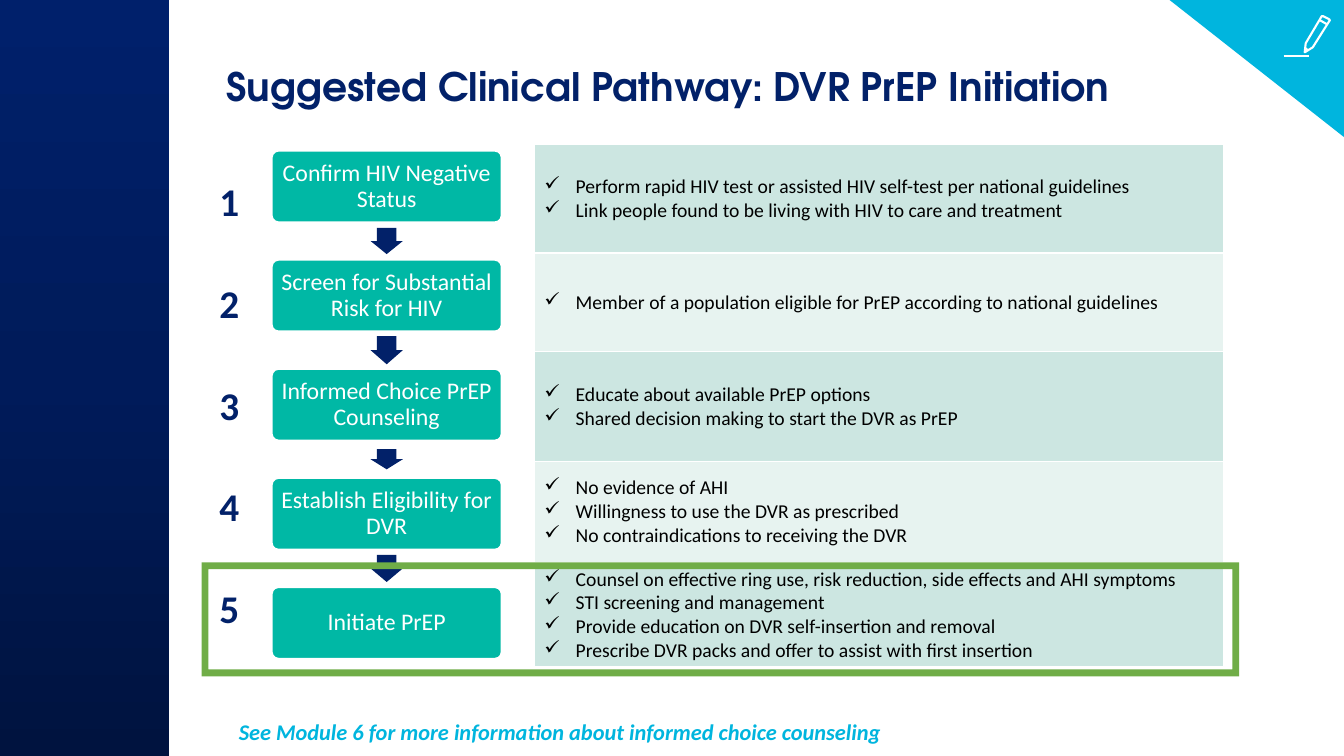
"""Build the clinical pathway slide for DVR PrEP initiation."""
from copy import deepcopy

from lxml.etree import SubElement
from pptx import Presentation
from pptx.dml.color import RGBColor
from pptx.enum.shapes import MSO_CONNECTOR, MSO_SHAPE as SHAPE
from pptx.enum.text import MSO_ANCHOR as ANCHOR, PP_ALIGN as ALIGN
from pptx.oxml import parse_xml
from pptx.oxml.ns import nsdecls, qn
from pptx.util import Inches, Pt

WHITE = RGBColor(0xFF, 0xFF, 0xFF)
BLACK = RGBColor(0, 0, 0)
NAVY = RGBColor(0x02, 0x21, 0x69)
TEAL = RGBColor(0x00, 0xB8, 0xA5)
CYAN = RGBColor(0x00, 0xB5, 0xDE)
GREEN = RGBColor(0x70, 0xAD, 0x47)
ROW_FILLS = [RGBColor(0xCC, 0xE6, 0xE1), RGBColor(0xE7, 0xF3, 0xF0)]
SIDEBAR_STOPS = [RGBColor(0x00, 0x13, 0x3F), RGBColor(0x00, 0x1B, 0x5A), RGBColor(0x00, 0x20, 0x6B)]

STEPS = [
    ("Confirm HIV Negative Status", 1.08, [
        "Perform rapid HIV test or assisted HIV self-test per national guidelines",
        "Link people found to be living with HIV to care and treatment"]),
    ("Screen for Substantial Risk for HIV", 0.98, [
        "Member of a population eligible for PrEP according to national guidelines"]),
    ("Informed Choice PrEP Counseling", 1.09, [
        "Educate about available PrEP options",
        "Shared decision making to start the DVR as PrEP"]),
    ("Establish Eligibility for DVR", 1, [
        "No evidence of AHI",
        "Willingness to use the DVR as prescribed",
        "No contraindications to receiving the DVR"]),
    ("Initiate PrEP", 1, [
        "Counsel on effective ring use, risk reduction, side effects and AHI symptoms",
        "STI screening and management",
        "Provide education on DVR self-insertion and removal",
        "Prescribe DVR packs and offer to assist with first insertion"]),
]
ARROW_LENGTHS = [0.26, 0.28, 0.2, 0.27]
BOX_LEFT, BOX_TOP, BOX_WIDTH, BOX_HEIGHT = 2.69, 1.49, 2.29, 0.72
BOX_PITCH = (5.82 - BOX_TOP) / 4

presentation = Presentation()
presentation.slide_width, presentation.slide_height = Inches(13.33), Inches(7.5)
slide = presentation.slides.add_slide(presentation.slide_layouts[6])
shapes = slide.shapes


def add_filled_shape(kind, left, top, width, height, color):
    shape = shapes.add_shape(kind, Inches(left), Inches(top), Inches(width), Inches(height))
    shape.shadow.inherit = False
    shape.fill.solid()
    shape.fill.fore_color.rgb = color
    shape.line.fill.background()
    return shape


def add_text(paragraph, text, size, color, bold=False, name="Calibri"):
    run = paragraph.add_run()
    run.text = text
    run.font.name, run.font.size, run.font.bold = name, Pt(size), bold
    run.font.color.rgb = color
    return run


sidebar = add_filled_shape(SHAPE.RECTANGLE, 0, 0, 1.68, 7.5, NAVY)
sidebar.fill.gradient()
sidebar.fill.gradient_angle = 90
stop_list = sidebar._element.spPr.find(qn("a:gradFill")).find(qn("a:gsLst"))
stop_list.insert(1, deepcopy(stop_list[0]))
for index, (stop, color) in enumerate(zip(sidebar.fill.gradient_stops, SIDEBAR_STOPS)):
    stop.position = index / 2
    stop.color.rgb = color

title = shapes.add_textbox(Inches(2.15), Inches(0.57), Inches(10), Inches(0.92))
title.text_frame.word_wrap = True
add_text(title.text_frame.paragraphs[0], "Suggested Clinical Pathway: DVR PrEP Initiation",
         28, NAVY, True, "TeX Gyre Adventor")

for index, (step, _, _) in enumerate(STEPS):
    top = BOX_TOP + index * BOX_PITCH
    box = add_filled_shape(SHAPE.ROUNDED_RECTANGLE, BOX_LEFT, top, BOX_WIDTH, BOX_HEIGHT, TEAL)
    box.adjustments[0] = 0.1
    box.line.color.rgb = WHITE
    box.line.width = Pt(2)
    frame = box.text_frame
    frame.word_wrap = True
    frame.vertical_anchor = ANCHOR.MIDDLE
    frame.margin_left = frame.margin_right = Inches(0.07)
    frame.margin_top = frame.margin_bottom = Inches(0.07)
    paragraph = frame.paragraphs[0]
    paragraph.alignment = ALIGN.CENTER
    paragraph.line_spacing = 0.9
    add_text(paragraph, step, 17, WHITE)
    if index < len(ARROW_LENGTHS):
        length = ARROW_LENGTHS[index]
        middle = top + (BOX_HEIGHT + BOX_PITCH) / 2
        arrow = add_filled_shape(SHAPE.DOWN_ARROW, BOX_LEFT + BOX_WIDTH / 2 - 0.16,
                                 middle - length / 2, 0.32, length, NAVY)
        arrow.adjustments[0], arrow.adjustments[1] = 0.6, 0.5

numbers = shapes.add_table(5, 1, Inches(1.93), Inches(1.49), Inches(0.69), Inches(5.05)).table
details = shapes.add_table(5, 1, Inches(5.3), Inches(1.43), Inches(6.84), Inches(5.15)).table
for table in (numbers, details):
    table.first_row = table.horz_banding = False

for index, (_, row_height, points) in enumerate(STEPS):
    number_cell, detail_cell = numbers.cell(index, 0), details.cell(index, 0)
    number_cell.fill.background()
    paragraph = number_cell.text_frame.paragraphs[0]
    paragraph.alignment = ALIGN.CENTER
    paragraph.line_spacing = 1.5
    add_text(paragraph, str(index + 1), 28, NAVY, True)

    details.rows[index].height = Inches(row_height)
    detail_cell.fill.solid()
    detail_cell.fill.fore_color.rgb = ROW_FILLS[index % 2]
    detail_cell.vertical_anchor = ANCHOR.MIDDLE
    frame = detail_cell.text_frame
    for position, point in enumerate(points):
        paragraph = frame.add_paragraph() if position else frame.paragraphs[0]
        properties = paragraph._p.get_or_add_pPr()
        properties.set("marL", str(Inches(0.31)))
        properties.set("indent", str(-Inches(0.31)))
        SubElement(properties, qn("a:buChar")).set("char", "✓")
        add_text(paragraph, point, 14, BLACK)

    for cell in (number_cell, detail_cell):
        for position, side in enumerate("LRTB"):
            cell._tc.get_or_add_tcPr().insert(position, parse_xml(
                f'<a:ln{side} {nsdecls("a")} w="12700"><a:solidFill>'
                f'<a:srgbClr val="{WHITE}"/></a:solidFill></a:ln{side}>'))

corner = add_filled_shape(SHAPE.RIGHT_TRIANGLE, 11.6, 0, 1.73, 1.36, CYAN)
corner.rotation = 180

pencil_outline = [(Inches(x), Inches(y)) for x, y in [
    (13.02, 0.47), (12.94, 0.52), (12.95, 0.43), (13.11, 0.16), (13.12, 0.16),
    (13.18, 0.19), (13.19, 0.2)]]
builder = shapes.build_freeform(*pencil_outline[0])
builder.add_line_segments(pencil_outline[1:], close=True)
pencil = builder.convert_to_shape()
pencil.shadow.inherit = False
pencil.fill.background()
pencil.line.color.rgb = WHITE
pencil.line.width = Pt(1.5)
for ends in [(13.09, 0.2, 13.16, 0.24), (12.95, 0.48, 12.97, 0.5), (12.73, 0.56, 12.98, 0.56)]:
    stroke = shapes.add_connector(MSO_CONNECTOR.STRAIGHT, *map(Inches, ends))
    stroke.line.color.rgb = WHITE
    stroke.line.width = Pt(1.5)
    SubElement(stroke._element.spPr, qn("a:effectLst"))

footnote = shapes.add_textbox(Inches(2.27), Inches(7.08), Inches(7.67), Inches(0.37))
footnote.text_frame.word_wrap = True
note = add_text(footnote.text_frame.paragraphs[0],
                "See Module 6 for more information about informed choice counseling", 16, CYAN, True)
note.font.italic = True

highlight = add_filled_shape(SHAPE.FRAME, 2, 5.58, 10.29, 1.13, GREEN)
highlight.adjustments[0] = 0.06

presentation.save("out.pptx")
